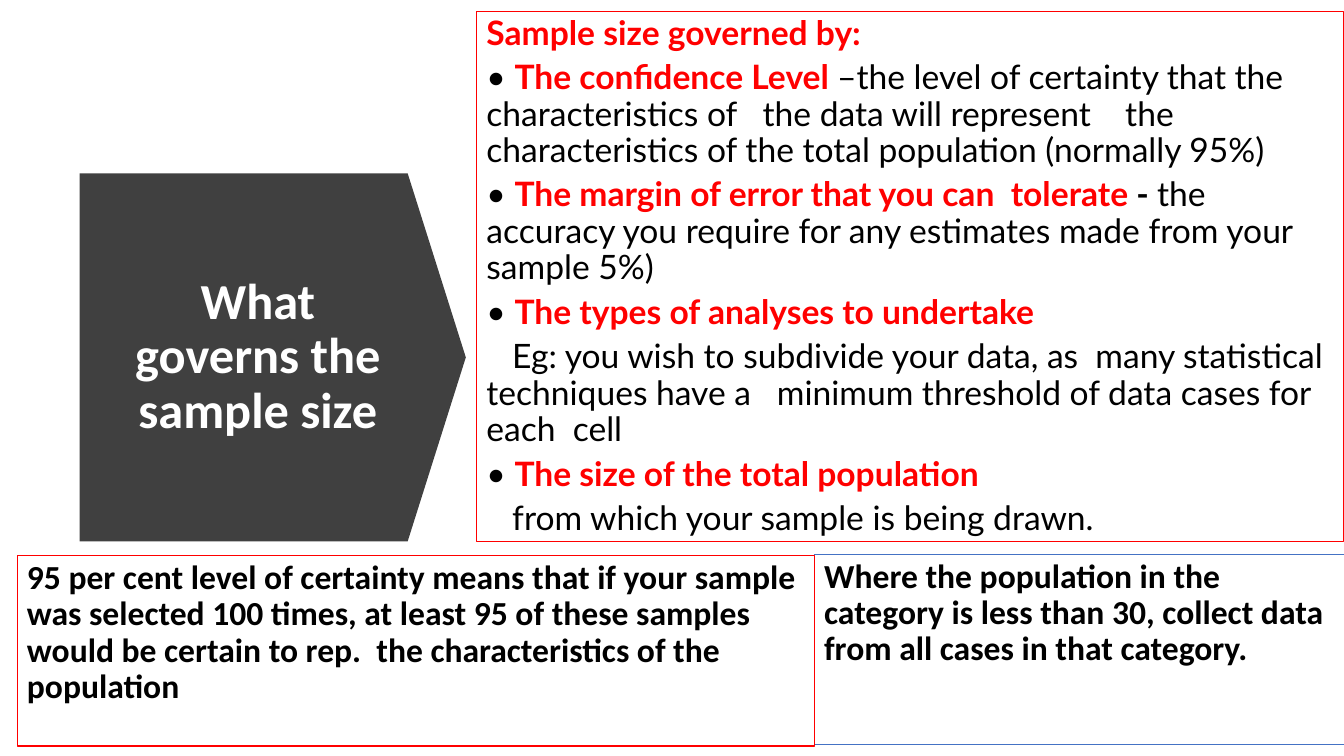
from dataclasses import dataclass

from pptx import Presentation
from pptx.dml.color import RGBColor
from pptx.enum.shapes import MSO_SHAPE
from pptx.enum.text import MSO_ANCHOR, MSO_AUTO_SIZE, PP_ALIGN
from pptx.slide import Slide
from pptx.text.text import TextFrame
from pptx.util import Cm, Pt

RECT = MSO_SHAPE.RECTANGLE
ARROW = MSO_SHAPE.DOWN_ARROW
TOP, MIDDLE = MSO_ANCHOR.TOP, MSO_ANCHOR.MIDDLE
LEFT, CENTER = PP_ALIGN.LEFT, PP_ALIGN.CENTER
FIXED = MSO_AUTO_SIZE.NONE


@dataclass(frozen=True)
class Theme:
    red: str = "FF0000"
    blue: str = "4472C4"
    dark: str = "404040"
    black: str = "000000"
    white: str = "FFFFFF"
    body: int = 24
    head: int = 36
    lato: str = "Lato"
    plain: str = "Calibri"
    pitch: float = 0.9
    after: int = 6
    edge: float = 0.75


THEME = Theme()


@dataclass(frozen=True)
class Span:
    text: str
    color: str = THEME.black
    bold: bool = False


@dataclass(frozen=True)
class Para:
    spans: tuple[Span, ...]
    indent: float = 0


@dataclass(frozen=True)
class Panel:
    area: tuple[float, float, float, float]
    line: str
    font: str
    paras: tuple[Para, ...]
    fill: str = ""


def key(text: str) -> Span:
    return Span(text, THEME.red, True)


def note(text: str) -> tuple[Para, ...]:
    return (Para((Span(text, bold=True),)),)


DOT = Span("• ")
PANELS = (
    Panel((12.01, 0.28, 21.84, 13.36), THEME.red, THEME.lato, (
        Para((key("Sample size governed by:"),)),
        Para((DOT, key("The confidence Level "),
              Span("–the level of certainty that the characteristics of   the data will represent    "
                   "the  characteristics of the total population (normally 95%)"))),
        Para((DOT, key("The margin of error that you can  tolerate "), Span("- ", bold=True),
              Span("the accuracy you require for any estimates made from your sample 5%)"))),
        Para((DOT, key("The types of analyses to undertake"))),
        Para((Span("Eg: you wish to subdivide your data, as  many statistical techniques have a   "
                   "minimum threshold of data cases for each  cell"),), 0.65),
        Para((DOT, key("The size of the total population"))),
        Para((Span("from which your sample is being drawn."),), 0.65),
    )),
    Panel((20.52, 13.97, 13.36, 4.8), THEME.blue, THEME.plain,
          note("Where the population in the category is less than 30, "
               "collect data from all cases in that category.")),
    Panel((0.43, 14, 20.09, 4.8), THEME.red, THEME.plain,
          note("95 per cent level of certainty means that if your sample was selected 100 times, "
               "at least 95 of these samples would be certain to rep.  the characteristics of the "
               "population"), THEME.white),
)


def write(frame: TextFrame, paras: tuple[Para, ...], font: str, size: int,
          align: PP_ALIGN = LEFT, anchor: MSO_ANCHOR = TOP, after: int = THEME.after) -> None:
    frame.word_wrap = True
    frame.auto_size = FIXED
    frame.vertical_anchor = anchor
    for i, para in enumerate(paras):
        line = frame.paragraphs[0] if i == 0 else frame.add_paragraph()
        line.alignment = align
        line.line_spacing = THEME.pitch
        line.space_after = Pt(after)
        if para.indent:
            props = line._p.get_or_add_pPr()
            props.set("marL", "0")
            props.set("indent", str(Cm(para.indent)))
        for span in para.spans:
            run = line.add_run()
            run.text = span.text
            run.font.name = font
            run.font.size = Pt(size)
            run.font.bold = span.bold
            run.font.color.rgb = RGBColor.from_string(span.color)


def draw_arrow(slide: Slide) -> None:
    arrow = slide.shapes.add_shape(ARROW, Cm(2.24), Cm(4.14), Cm(9.27), Cm(9.73))
    arrow.rotation = 270
    arrow.adjustments[0] = 1
    arrow.adjustments[1] = 0.158
    arrow.shadow.inherit = False
    arrow.fill.solid()
    arrow.fill.fore_color.rgb = RGBColor.from_string(THEME.dark)
    arrow.line.fill.background()


def draw_panel(slide: Slide, panel: Panel) -> None:
    box = slide.shapes.add_shape(RECT, *map(Cm, panel.area))
    box.shadow.inherit = False
    if panel.fill:
        box.fill.solid()
        box.fill.fore_color.rgb = RGBColor.from_string(panel.fill)
    else:
        box.fill.background()
    box.line.color.rgb = RGBColor.from_string(panel.line)
    box.line.width = Pt(THEME.edge)
    write(box.text_frame, panel.paras, panel.font, THEME.body)


def draw_title(slide: Slide) -> None:
    title = slide.shapes.title
    title.left, title.top, title.width, title.height = map(Cm, (2.84, 5.46, 7.32, 7.09))
    text = Para((Span("What governs the sample size", THEME.white, True),))
    write(title.text_frame, (text,), THEME.plain, THEME.head, CENTER, MIDDLE, 0)
    title.element.getparent().append(title.element)


def main() -> None:
    deck = Presentation()
    deck.slide_width, deck.slide_height = Cm(33.87), Cm(19.05)
    slide = deck.slides.add_slide(deck.slide_layouts[5])
    draw_arrow(slide)
    for panel in PANELS:
        draw_panel(slide, panel)
    draw_title(slide)
    deck.save("out.pptx")


if __name__ == "__main__":
    main()
